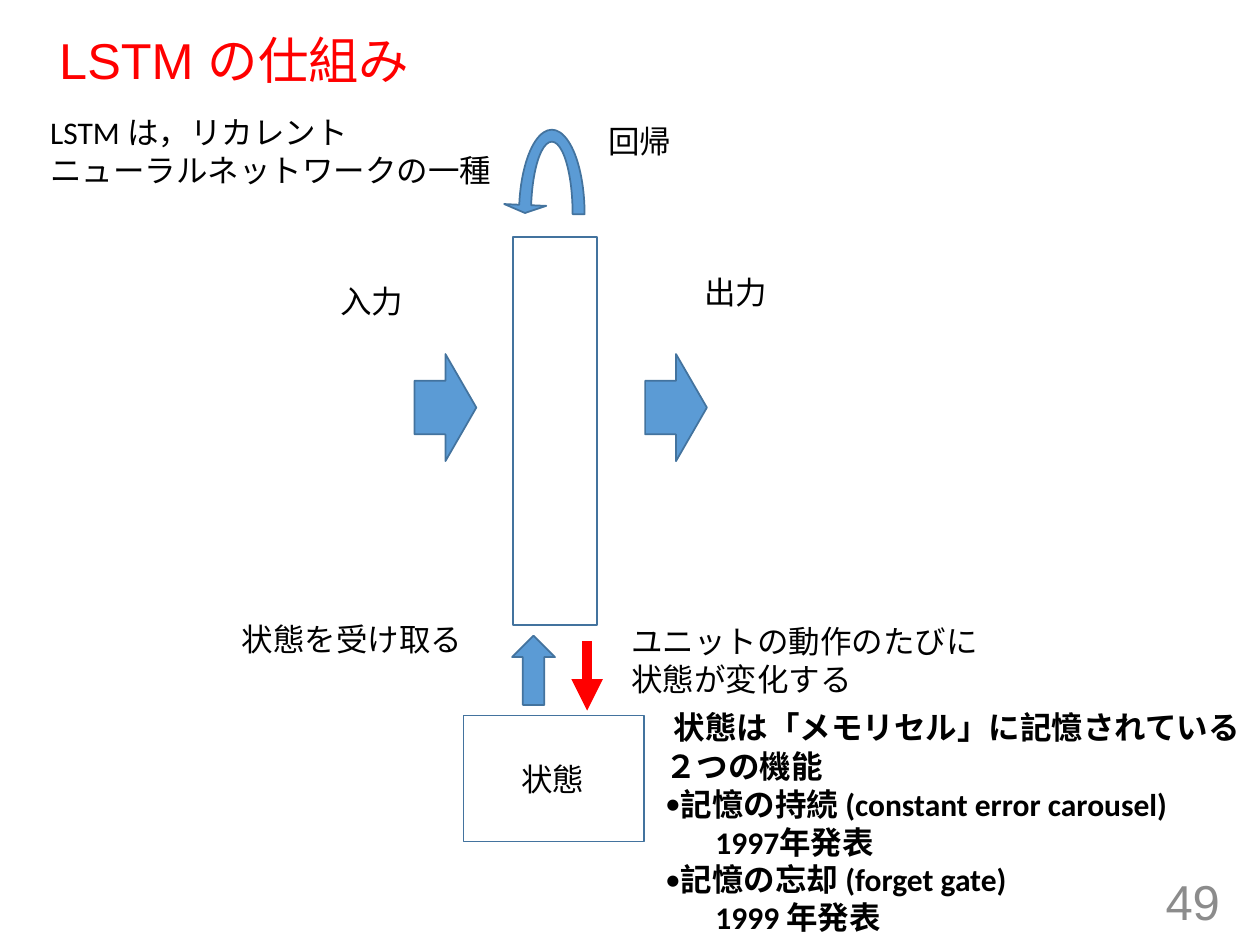
from pptx import Presentation
from pptx.dml.color import RGBColor
from pptx.enum.shapes import MSO_CONNECTOR as Link, MSO_SHAPE as Kind
from pptx.enum.text import MSO_ANCHOR as Anchor, MSO_AUTO_SIZE as Auto, PP_ALIGN as Align
from pptx.oxml.ns import qn
from pptx.util import Inches, Pt
from lxml import etree


def color(fmt, code):
    """Give a fill, line or font a solid colour."""
    if hasattr(fmt, "solid"):
        fmt.solid()
        fmt.fore_color.rgb = RGBColor.from_string(code)
    else:
        fmt.color.rgb = RGBColor.from_string(code)


def style(para, size, code="000000", name="Calibri", bold=False):
    for run in para.runs:
        run.font.size = Pt(size)
        run.font.name = name
        run.font.bold = bold
        color(run.font, code)


prs = Presentation()
prs.slide_width, prs.slide_height = Inches(10), Inches(7.5)
slide = prs.slides.add_slide(prs.slide_layouts[5])
shapes = slide.shapes

# Title and page number
title = shapes.title
title.left, title.top = Inches(0.37), Inches(0.25)
title.width, title.height = Inches(9.25), Inches(0.51)
frame = title.text_frame
frame.text = "LSTM の仕組み"
frame.auto_size = Auto.NONE
frame.vertical_anchor = Anchor.MIDDLE
head = frame.paragraphs[0]
head.alignment = Align.LEFT
head.line_spacing = 0.9
style(head, 28.8, "FF0000", "Arial")

page = shapes.add_textbox(Inches(7.53), Inches(6.95), Inches(2.25), Inches(0.4))
frame = page.text_frame
frame.text = "49"
frame.word_wrap = True
frame.vertical_anchor = Anchor.MIDDLE
frame.paragraphs[0].alignment = Align.RIGHT
style(frame.paragraphs[0], 28, "8C8C8C", "Arial")

# Unit, state box and block arrows: kind, left, top, width, height, fill, turn
blue = "5B9BD5"
parts = [
    (Kind.RECTANGLE, 4.07, 1.88, 0.67, 3.08, None, 0),
    (Kind.RIGHT_ARROW, 3.29, 2.81, 0.49, 0.85, blue, 0),
    (Kind.RIGHT_ARROW, 5.12, 2.81, 0.49, 0.85, blue, 0),
    (Kind.CIRCULAR_ARROW, 4, 0.91, 0.76, 1.58, blue, 0),
    (Kind.RECTANGLE, 3.68, 5.68, 1.43, 1, None, 0),
    (Kind.RIGHT_ARROW, 3.96, 5.15, 0.55, 0.34, blue, 270),
]
for kind, left, top, width, height, fill, turn in parts:
    part = shapes.add_shape(kind, Inches(left), Inches(top), Inches(width), Inches(height))
    part.shadow.inherit = False
    part.rotation = turn
    color(part.line, "43739E")
    part.line.width = Pt(1)
    if fill:
        color(part.fill, fill)
    else:
        part.fill.background()
    if kind == Kind.CIRCULAR_ARROW:
        for i, value in enumerate([0.125, 9.93, 204.58, 108, 0.22]):
            part.adjustments[i] = value
        part._element.spPr.find(qn("a:xfrm")).set("flipH", "1")

# Red arrow from the unit to its state
arrow = shapes.add_connector(Link.STRAIGHT, Inches(4.66), Inches(5.09), Inches(4.66), Inches(5.64))
color(arrow.line, "FF0000")
arrow.line.width = Pt(6)
etree.SubElement(arrow.line._get_or_add_ln(), qn("a:tailEnd"), type="triangle")
etree.SubElement(arrow._element.spPr, qn("a:effectLst"))

# Labels: left, top, width, height, bold, lines
labels = [
    (4.73, 0.92, 0.71, 0.4, False, ["回帰"]),
    (2.6, 2.19, 0.71, 0.4, False, ["入力"]),
    (5.49, 2.12, 0.71, 0.4, False, ["出力"]),
    (4.04, 5.98, 0.71, 0.4, False, ["状態"]),
    (1.82, 4.87, 1.97, 0.4, False, ["状態を受け取る"]),
    (5.25, 5.57, 4.75, 0.4, True, ["状態は「メモリセル」に記憶されている"]),
    (4.91, 4.89, 2.98, 0.71, False, ["ユニットの動作のたびに", "状態が変化する"]),
    (0.3, 0.85, 3.74, 0.71, False, ["LSTM は，リカレント", "ニューラルネットワークの一種"]),
    (5.18, 5.88, 4.35, 1.62, True, [
        "２つの機能",
        "記憶の持続 (constant error carousel)",
        "1997年発表",
        "記憶の忘却 (forget gate)",
        "1999 年発表",
    ]),
]
for left, top, width, height, bold, lines in labels:
    label = shapes.add_textbox(Inches(left), Inches(top), Inches(width), Inches(height))
    frame = label.text_frame
    frame.text = "\n".join(lines)
    frame.word_wrap = False
    frame.auto_size = Auto.SHAPE_TO_FIT_TEXT
    for para in frame.paragraphs:
        style(para, 18, bold=bold)
        props = para._p.get_or_add_pPr()
        if para.text.startswith("記憶"):
            props.set("marL", str(Inches(0.1)))
            props.set("indent", str(-Inches(0.1)))
            etree.SubElement(props, qn("a:buFont"), typeface="Calibri")
            etree.SubElement(props, qn("a:buChar"), char="•")
        elif para.text.startswith("19"):
            props.set("marL", str(Inches(0.4)))

prs.save("out.pptx")
